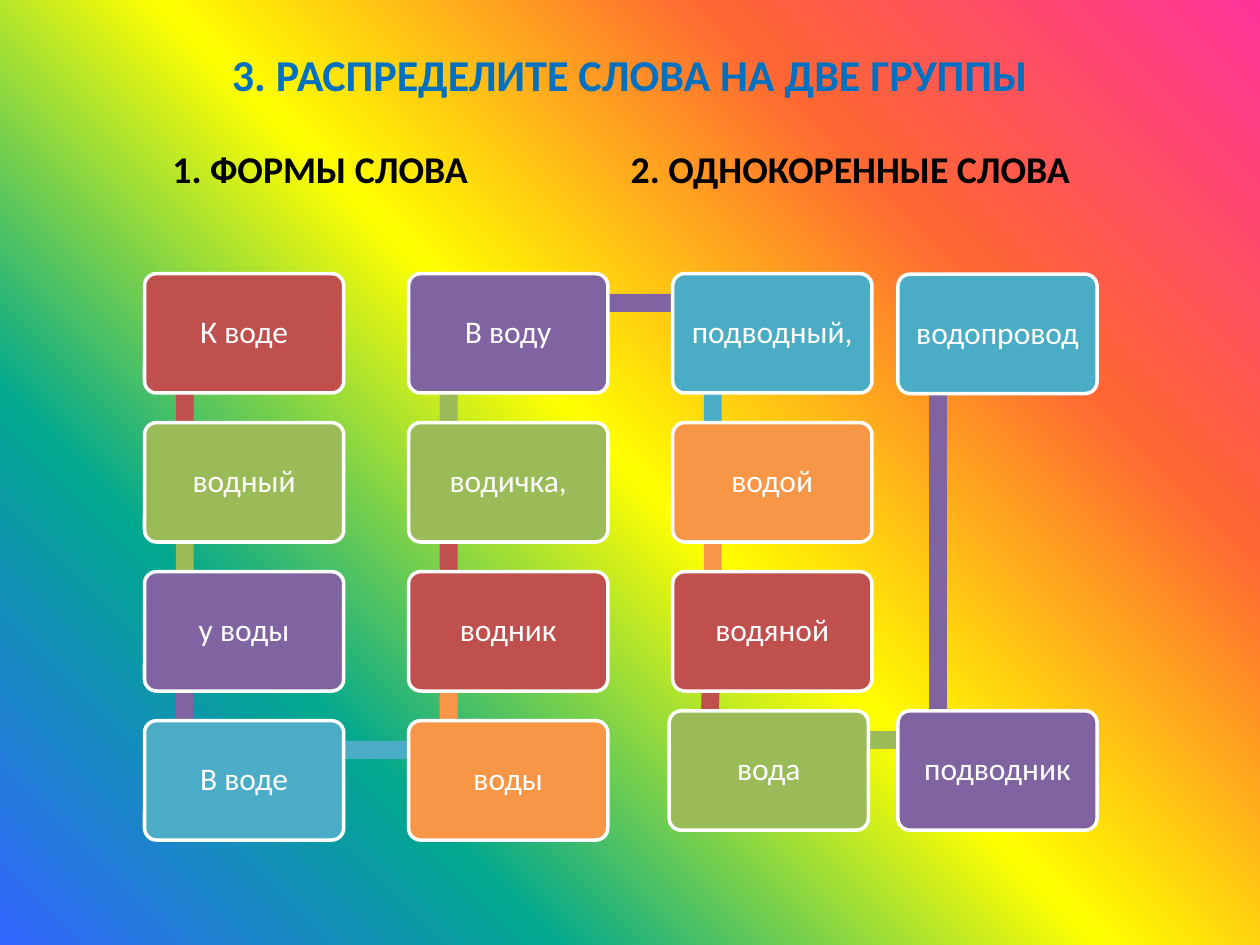
import math
from copy import deepcopy

from lxml import etree
from pptx import Presentation
from pptx.dml.color import RGBColor
from pptx.enum import shapes, text
from pptx.oxml import ns
from pptx.util import Pt

RED, GREEN, PURPLE, TEAL, ORANGE = "C0504D", "9BBB59", "8064A2", "4BACC6", "F79646"
RAINBOW = ["FF3399", "FF6633", "FFFF00", "01A78F", "3366FF"]
CARD_W, CARD_H = 113.8, 68.2
COLUMN_STEP, ROW_STEP = 150.9, 85.15
ANCHOR_X, ANCHOR_Y, BAND = 22.9, 16.7, 10.2

# column and row of each word along the snake, then its colour
SNAKE = [
    ("К воде", 0, 0, RED), ("водный", 0, 1, GREEN),
    ("у воды", 0, 2, PURPLE), ("В воде", 0, 3, TEAL),
    ("воды", 1, 3, ORANGE), ("водник", 1, 2, RED),
    ("водичка,", 1, 1, GREEN), ("В воду", 1, 0, PURPLE),
    ("подводный,", 2, 0, TEAL), ("водой", 2, 1, ORANGE),
    ("водяной", 2, 2, RED),
]
TAIL = [
    ("вода", 299.8, 249.8, GREEN),
    ("подводник", 430.5, 249.8, PURPLE),
    ("водопровод", 430.5, 0.3, TEAL),
]


def rgb(value):
    """Turn a hex string into a colour."""
    return RGBColor.from_string(value)


def paint_background(slide, colours):
    """Fill the slide with evenly spaced colours from top right to bottom left."""
    fill = slide.background.fill
    fill.gradient()
    fill.gradient_angle = 225
    stops = slide._element.find(".//" + ns.qn("a:gsLst"))
    sample = deepcopy(stops[0])
    for stop in list(stops):
        stops.remove(stop)
    for index, colour in enumerate(colours):
        stop = deepcopy(sample)
        stop.set("pos", str(index * 100000 // (len(colours) - 1)))
        for child in list(stop):
            stop.remove(child)
        etree.SubElement(stop, ns.qn("a:srgbClr"), val=colour)
        stops.append(stop)


def write(frame, wording, size, colour, bold=False):
    """Write one centred run in a frame and return the run."""
    frame.vertical_anchor = text.MSO_ANCHOR.MIDDLE
    frame.word_wrap = True
    paragraph = frame.paragraphs[0]
    paragraph.alignment = text.PP_ALIGN.CENTER
    run = paragraph.add_run()
    run.text = wording
    run.font.name = "Calibri"
    run.font.size = Pt(size)
    run.font.bold = bold
    run.font.color.rgb = rgb(colour)
    return run


def outline(run, colour, width, opacity):
    """Give the letters of a run a thin translucent outline."""
    line = etree.Element(ns.qn("a:ln"), w=str(Pt(width)))
    fill = etree.SubElement(line, ns.qn("a:solidFill"))
    tint = etree.SubElement(fill, ns.qn("a:srgbClr"), val=colour)
    etree.SubElement(tint, ns.qn("a:alpha"), val=str(opacity * 1000))
    run.font._element.insert(0, line)


def add_headings(slide, left, top, width):
    """Place the task title and the names of the two groups."""
    def heading(wording, x, y, w, size, colour):
        box = slide.shapes.add_textbox(Pt(left + x), Pt(top + y), Pt(w), Pt(40))
        return write(box.text_frame, wording, size, colour, True)

    task = heading("3. РАСПРЕДЕЛИТЕ СЛОВА НА ДВЕ ГРУППЫ", 0, 0, width, 25.2, "0070C0")
    outline(task, "1E7CEE", 0.07, 55)
    heading("1. ФОРМЫ СЛОВА", 37, 54, 220, 21.6, "000000")
    heading("2. ОДНОКОРЕННЫЕ СЛОВА", 300, 54, 300, 21.6, "000000")


def add_block(slide, preset, left, top, width, height, colour):
    """Place a flat filled shape."""
    block = slide.shapes.add_shape(preset, Pt(left), Pt(top), Pt(width), Pt(height))
    block.shadow.inherit = False
    block.fill.solid()
    block.fill.fore_color.rgb = rgb(colour)
    block.line.fill.background()
    return block


def add_band(slide, start, end, colour):
    """Join two points with a flat band."""
    dx, dy = end[0] - start[0], end[1] - start[1]
    length = math.hypot(dx, dy)
    left = (start[0] + end[0] - length) / 2
    top = (start[1] + end[1] - BAND) / 2
    band = add_block(slide, shapes.MSO_SHAPE.RECTANGLE, left, top, length, BAND, colour)
    band.rotation = math.degrees(math.atan2(dy, dx))


def add_card(slide, left, top, word, colour):
    """Place a rounded card with one word."""
    card = add_block(slide, shapes.MSO_SHAPE.ROUNDED_RECTANGLE,
                     left, top, CARD_W, CARD_H, colour)
    card.adjustments[0] = 0.1
    card.line.color.rgb = rgb("FFFFFF")
    card.line.width = Pt(2)
    frame = card.text_frame
    frame.margin_left = frame.margin_right = Pt(5)
    frame.margin_top = frame.margin_bottom = Pt(5)
    write(frame, word, 18, "FFFFFF")
    frame.paragraphs[0].line_spacing = 0.9


def add_word_chain(slide, left, top):
    """Place the word cards, each tied to the next by a band of its own colour."""
    cards = [(word, column * COLUMN_STEP, row * ROW_STEP, colour)
             for word, column, row, colour in SNAKE] + TAIL
    anchors = [(left + x + ANCHOR_X, top + y + ANCHOR_Y) for _, x, y, _ in cards]
    for index, (word, x, y, colour) in enumerate(cards):
        if index + 1 < len(cards):
            add_band(slide, anchors[index], anchors[index + 1], colour)
        add_card(slide, left + x, top + y, word, colour)


def main():
    """Build and save the slide."""
    deck = Presentation()
    deck.slide_width, deck.slide_height = Pt(720), Pt(540)
    slide = deck.slides.add_slide(deck.slide_layouts[6])
    paint_background(slide, RAINBOW)
    add_headings(slide, 36, 22, 648)
    add_word_chain(slide, 82.6, 156.4)
    deck.save("out.pptx")


if __name__ == "__main__":
    main()
